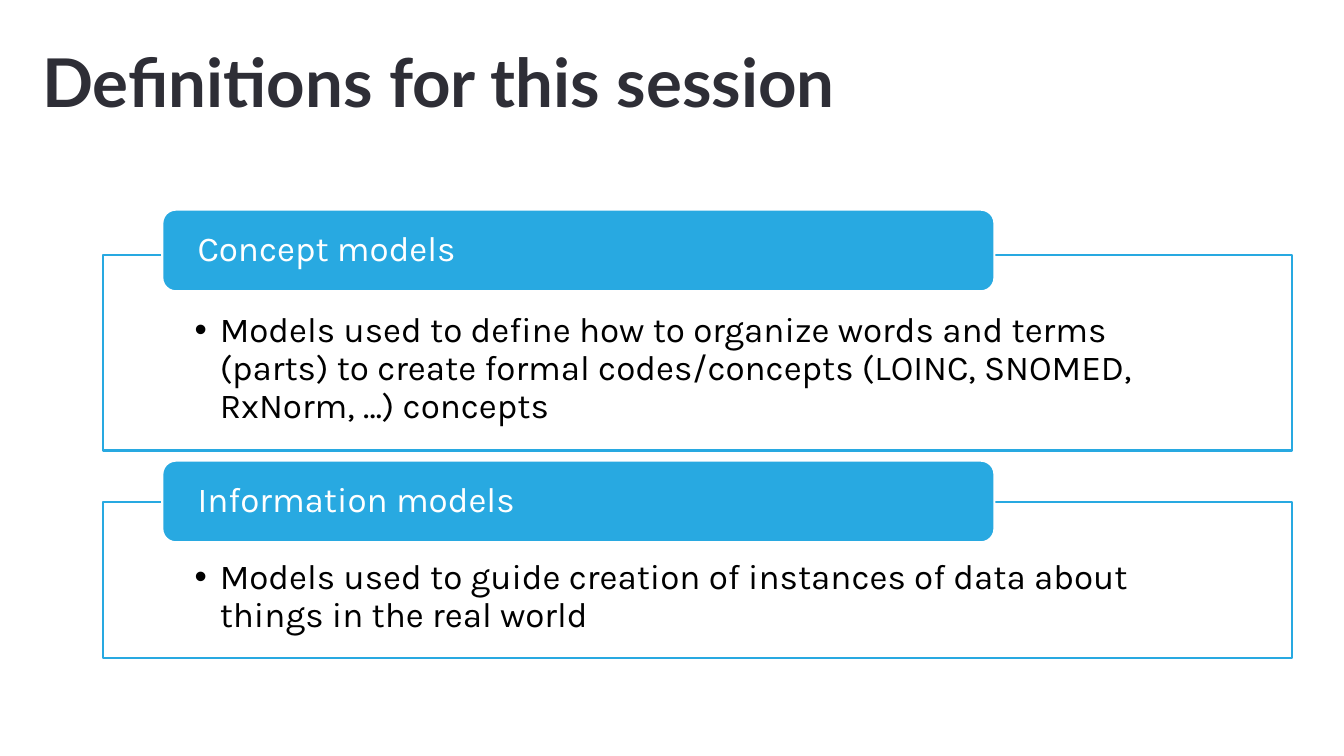
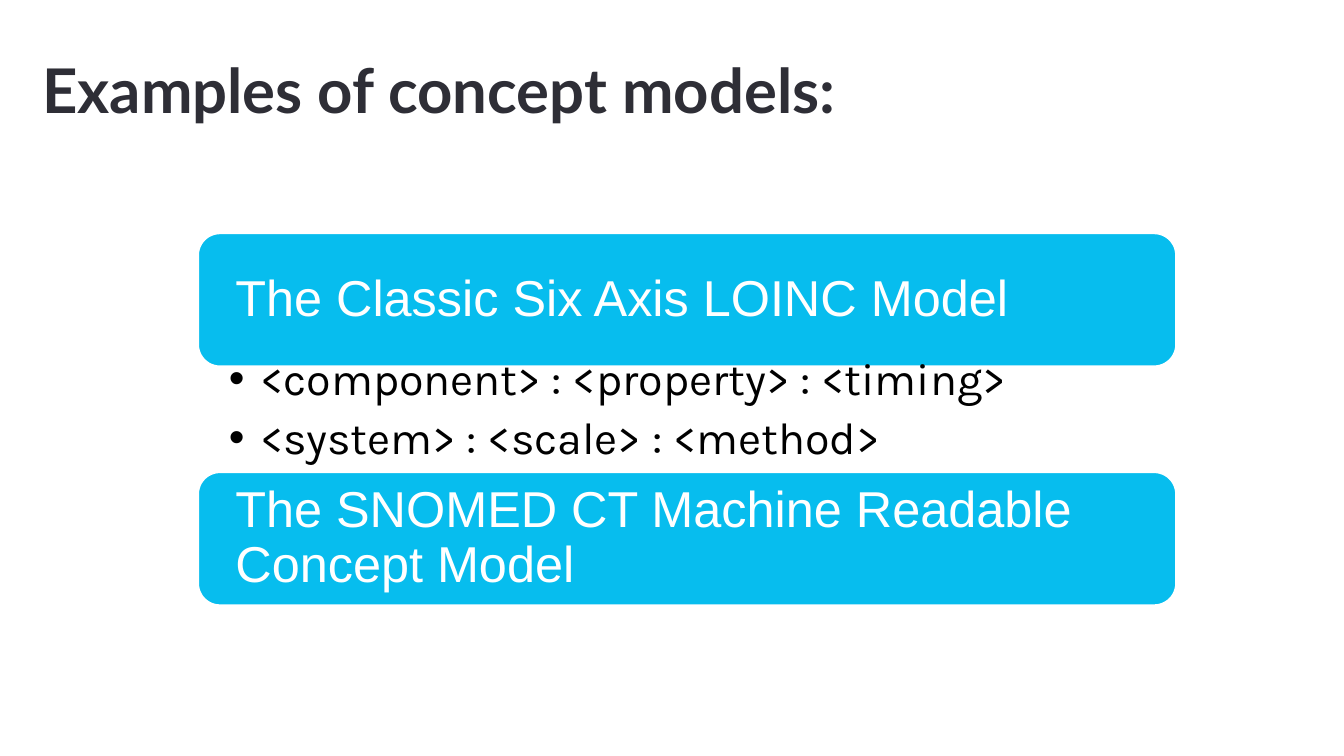
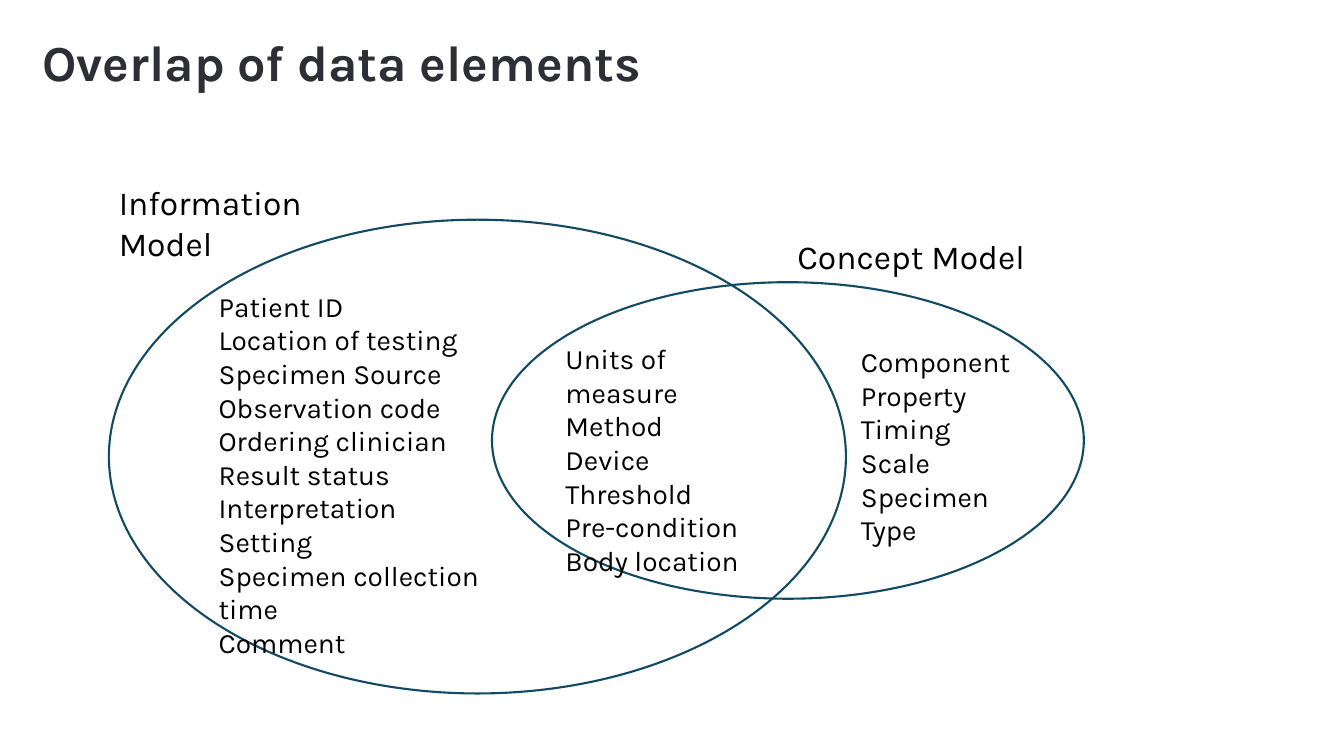
from lxml.etree import SubElement
from pptx import Presentation
from pptx.dml.color import RGBColor
from pptx.enum.shapes import MSO_SHAPE as Shape
from pptx.enum.text import MSO_ANCHOR as Anchor, PP_ALIGN as Align
from pptx.oxml.ns import qn
from pptx.util import Inches, Pt

WHITE = RGBColor(0xFF, 0xFF, 0xFF)
BLACK = RGBColor(0x00, 0x00, 0x00)
INK = RGBColor(0x2E, 0x2E, 0x36)
BLUE = RGBColor(0x28, 0xA9, 0xE1)
CYAN = RGBColor(0x07, 0xBD, 0xEE)
NAVY = RGBColor(0x12, 0x4A, 0x63)
KARLA = "Karla"
TITLE_BOX = (0.32, 0.28, 9.71, 1.03)


# Shared helpers
def write(shape, lines, size, color=BLACK, font=KARLA, bold=False, anchor=Anchor.TOP,
          insets=(0.1, 0.05, 0.1, 0.05), spacing=None, after=0, bullet_indent=0):
    """Fill a shape with one paragraph per line; insets are left, top, right, bottom."""
    frame = shape.text_frame
    frame.word_wrap = True
    frame.vertical_anchor = anchor
    (frame.margin_left, frame.margin_top,
     frame.margin_right, frame.margin_bottom) = map(Inches, insets)
    for index, line in enumerate(lines):
        paragraph = frame.add_paragraph() if index else frame.paragraphs[0]
        paragraph.text = line
        paragraph.alignment = Align.LEFT
        paragraph.line_spacing = spacing
        paragraph.space_after = Pt(after)
        if bullet_indent:
            properties = paragraph._p.get_or_add_pPr()
            properties.set("marL", str(Inches(bullet_indent)))
            properties.set("indent", str(-Inches(bullet_indent)))
            SubElement(properties, qn("a:buFont"), typeface="Arial")
            SubElement(properties, qn("a:buChar"), char="•")
        paragraph.font.name = font
        paragraph.font.size = Pt(size)
        paragraph.font.bold = bold
        paragraph.font.color.rgb = color


def add_text(slide, box, lines, size, **style):
    write(slide.shapes.add_textbox(*map(Inches, box)), lines, size, **style)


def add_outline(slide, kind, box, fill, line, width=1.5):
    shape = slide.shapes.add_shape(kind, *map(Inches, box))
    shape.shadow.inherit = False
    if fill is None:
        shape.fill.background()
    else:
        shape.fill.solid()
        shape.fill.fore_color.rgb = fill
    shape.line.color.rgb = line
    shape.line.width = Pt(width)
    return shape


def add_heading_bar(slide, box, text, size, fill, font=KARLA, border=1.5):
    bar = add_outline(slide, Shape.ROUNDED_RECTANGLE, box, fill, WHITE, border)
    write(bar, [text], size, color=WHITE, font=font, anchor=Anchor.MIDDLE,
          insets=(0.31, 0, 0.31, 0), spacing=0.9)


def add_titled_slide(presentation, title, size, font="Lato", anchor=Anchor.BOTTOM, inset=0.1):
    slide = presentation.slides.add_slide(presentation.slide_layouts[6])
    add_text(slide, TITLE_BOX, [title], size, color=INK, font=font, bold=True,
             anchor=anchor, insets=(0.1, inset, 0.1, inset), spacing=0.9)
    return slide


# Definitions: outlined panels with a heading tab over the top edge
def add_definition(slide, box, tab_rise, heading, text):
    left, top, width, height = box
    panel = add_outline(slide, Shape.RECTANGLE, box, WHITE, BLUE)
    write(panel, [text], 25, insets=(0.91, 0.57, 0.91, 0.19), spacing=0.9, bullet_indent=0.25)
    tab = (left + 0.59, top - tab_rise, width * 0.7, 0.81)
    add_heading_bar(slide, tab, heading, 25, BLUE)


def build_definitions(presentation):
    slide = add_titled_slide(presentation, "Definitions for this session", 48)
    add_definition(slide, (1.02, 2.53, 11.79, 1.94), 0.45, "Concept models",
                   "Models used to define how to organize words and terms (parts) to create "
                   "formal codes/concepts (LOINC, SNOMED, RxNorm, …) concepts")
    add_definition(slide, (1.02, 4.98, 11.79, 1.55), 0.41, "Information models",
                   "Models used to guide creation of instances of data about things "
                   "in the real world")


# Examples: heading bars with a bulleted list between them
def add_examples(slide, left, top, width):
    bar_height, list_height = 1.33, 1.18
    list_top = top + 1.19
    headings = [
        (top, "The Classic Six Axis LOINC Model"),
        (list_top + list_height, "The SNOMED CT Machine Readable Concept Model"),
    ]
    for bar_top, heading in headings:
        add_heading_bar(slide, (left, bar_top, width, bar_height), heading, 36, CYAN,
                        font="Arial", border=2)
    add_text(slide, (left, list_top, width, list_height),
             ["<component> : <property> : <timing>", "<system> : <scale> : <method>"], 32,
             insets=(0.31, 0.04, 0.25, 0.04), spacing=0.9, after=7.5, bullet_indent=0.31)


def build_examples(presentation):
    slide = add_titled_slide(presentation, "Examples of concept models:", 44, inset=0.05)
    add_examples(slide, 1.96, 2.31, 9.71)


# Overlap: two ellipses with the data elements of each part
def add_overlap(slide, left, top):
    def place(x, y, width, height):
        return left + x, top + y, width, height

    for box in (place(0, 0.42, 7.31, 4.7), place(3.8, 1.04, 5.87, 3.14)):
        add_outline(slide, Shape.OVAL, box, None, NAVY)

    element_lists = [
        (place(4.43, 1.58, 2.32, 2.12),
         ["Units of measure", "Method", "Device", "Threshold", "Pre-condition",
          "Body location"]),
        (place(0.99, 1.06, 3.3, 3.47),
         ["Patient ID", "Location of testing", "Specimen Source", "Observation code",
          "Ordering clinician", "Result status", "Interpretation", "Setting",
          "Specimen collection time", "Comment"]),
        (place(7.36, 1.61, 2.03, 1.78),
         ["Component", "Property", "Timing", "Scale", "Specimen Type"]),
    ]
    for box, elements in element_lists:
        add_text(slide, box, elements, 20)

    add_text(slide, place(0, 0, 2.9, 0.5), ["Information Model"], 24)
    add_text(slide, place(6.73, 0.53, 2.47, 0.5), ["Concept Model"], 24)


def build_overlap(presentation):
    slide = add_titled_slide(presentation, "Overlap of data elements", 36,
                             font=KARLA, anchor=Anchor.TOP)
    add_overlap(slide, 1.08, 1.76)


def main():
    presentation = Presentation()
    presentation.slide_width = Inches(13.33)
    presentation.slide_height = Inches(7.5)
    build_definitions(presentation)
    build_examples(presentation)
    build_overlap(presentation)
    presentation.save("out.pptx")


if __name__ == "__main__":
    main()
